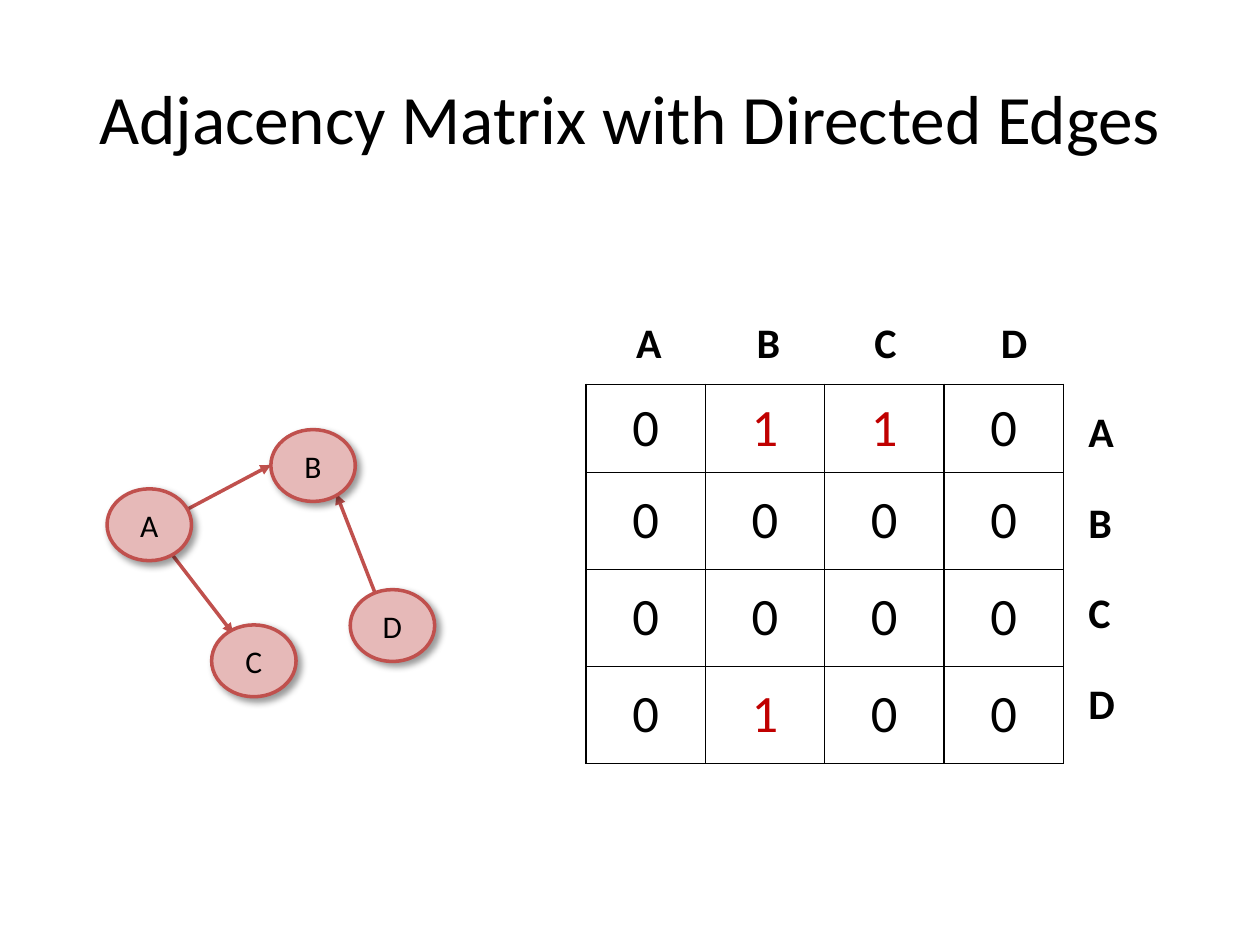
from lxml import etree
from pptx import Presentation
from pptx.dml.color import RGBColor
from pptx.enum.shapes import MSO_CONNECTOR, MSO_SHAPE
from pptx.enum.text import MSO_ANCHOR, PP_ALIGN
from pptx.oxml.ns import qn
from pptx.util import Inches, Pt

STRAIGHT, OVAL = MSO_CONNECTOR.STRAIGHT, MSO_SHAPE.OVAL
MIDDLE, CENTER = MSO_ANCHOR.MIDDLE, PP_ALIGN.CENTER

COLORS = {"text": "000000", "one": "C00000", "edge": "C0504D",
          "node": "E6B9B8", "white": "FFFFFF"}
LABEL = {"size": Pt(24), "bold": True}

MATRIX = ["0110", "0000", "0000", "0100"]
ROW_HEIGHTS = [0.7, 0.77, 0.77, 0.77]
COLUMN_TABS = [0.4, 1.35, 2.28, 3.3]
NODE_SIZE = (0.67, 0.57)
NODES = {"B": (2.15, 3.41), "D": (2.78, 4.68), "A": (0.85, 3.88), "C": (1.68, 4.96)}
EDGES = [((1.18, 4.16), (1.85, 5.03)),   # A to C
         ((1.34, 4.12), (2.15, 3.69)),   # A to B
         ((3.06, 4.92), (2.67, 3.92))]   # D to B


def rgb(name):
    return RGBColor.from_string(COLORS[name])


def add_child(parent, tag, **attrs):
    return etree.SubElement(parent, qn(tag), {k: str(v) for k, v in attrs.items()})


def write(p, text, fmt, color="text"):
    r = p.add_run()
    r.text = text
    for name, value in {"name": "Calibri", **fmt}.items():
        setattr(r.font, name, value)
    r.font.color.rgb = rgb(color)


def add_label_box(s, *box):
    tf = s.shapes.add_textbox(*map(Inches, box)).text_frame
    tf.word_wrap = True
    return tf


def add_matrix(s):
    table = s.shapes.add_table(4, 4, *map(Inches, (4.65, 3.05, 3.79, 3.01))).table
    for row, digits, height in zip(table.rows, MATRIX, ROW_HEIGHTS):
        row.height = Inches(height)
        for cell, digit in zip(row.cells, digits):
            cell.vertical_anchor = MIDDLE
            p = cell.text_frame.paragraphs[0]
            p.alignment = CENTER
            write(p, digit, {"size": Pt(30)}, "one" if digit == "1" else "text")
            # Borders come before the fill in the cell properties
            tc_pr = cell._tc.get_or_add_tcPr()
            for side in ("a:lnL", "a:lnR", "a:lnT", "a:lnB"):
                ln = add_child(tc_pr, side, w=Pt(1))
                add_child(add_child(ln, "a:solidFill"), "a:srgbClr", val=COLORS["text"])
            cell.fill.solid()
            cell.fill.fore_color.rgb = rgb("white")


def add_column_labels(s):
    p = add_label_box(s, 4.65, 2.46, 4.08, 0.5).paragraphs[0]
    tabs = add_child(p._p.get_or_add_pPr(), "a:tabLst")
    for pos in COLUMN_TABS:
        add_child(tabs, "a:tab", pos=Inches(pos), algn="ctr")
    write(p, "\tA\tB\tC\tD", LABEL)


def add_row_labels(s):
    tf = add_label_box(s, 8.54, 3.17, 0.54, 2.68)
    for i, letter in enumerate("ABCD"):
        p = tf.add_paragraph() if i else tf.paragraphs[0]
        p.space_after = Pt(23)
        write(p, letter, LABEL)


def add_edge(s, start, end):
    line = s.shapes.add_connector(STRAIGHT, *map(Inches, start + end))
    line.line.color.rgb = rgb("edge")
    line.line.width = Pt(2)
    add_child(line.line._get_or_add_ln(), "a:tailEnd", type="triangle")
    add_child(line._element.spPr, "a:effectLst")


def add_node(s, letter, position):
    sp = s.shapes.add_shape(OVAL, *map(Inches, position + NODE_SIZE))
    sp.fill.solid()
    sp.fill.fore_color.rgb = rgb("node")
    sp.line.color.rgb = rgb("edge")
    sp.line.width = Pt(2)
    # Soft shadow to the lower right
    effects = add_child(sp._element.spPr, "a:effectLst")
    shadow = add_child(effects, "a:outerShdw", blurRad=Pt(4), dist=Pt(3),
                       dir=45 * 60000, rotWithShape=0)
    add_child(add_child(shadow, "a:srgbClr", val=COLORS["text"]), "a:alpha", val=40000)
    tf = sp.text_frame
    tf.vertical_anchor = MIDDLE
    p = tf.paragraphs[0]
    p.alignment = CENTER
    write(p, letter, {"size": Pt(18)})


def add_title(s):
    title = s.shapes.title
    title.left, title.top, title.width, title.height = map(Inches, (0.5, 0.3, 9, 1.25))
    tf = title.text_frame
    tf.vertical_anchor = MIDDLE
    p = tf.paragraphs[0]
    p.alignment = CENTER
    write(p, "Adjacency Matrix with Directed Edges", {"size": Pt(39.6)})


def main():
    prs = Presentation()
    prs.slide_width, prs.slide_height = Inches(10), Inches(7.5)
    s = prs.slides.add_slide(prs.slide_layouts[5])
    add_title(s)

    # Adjacency matrix
    add_matrix(s)
    add_column_labels(s)

    # Directed graph
    for start, end in EDGES:
        add_edge(s, start, end)
    for letter, position in NODES.items():
        add_node(s, letter, position)

    add_row_labels(s)
    prs.save("out.pptx")


if __name__ == "__main__":
    main()
